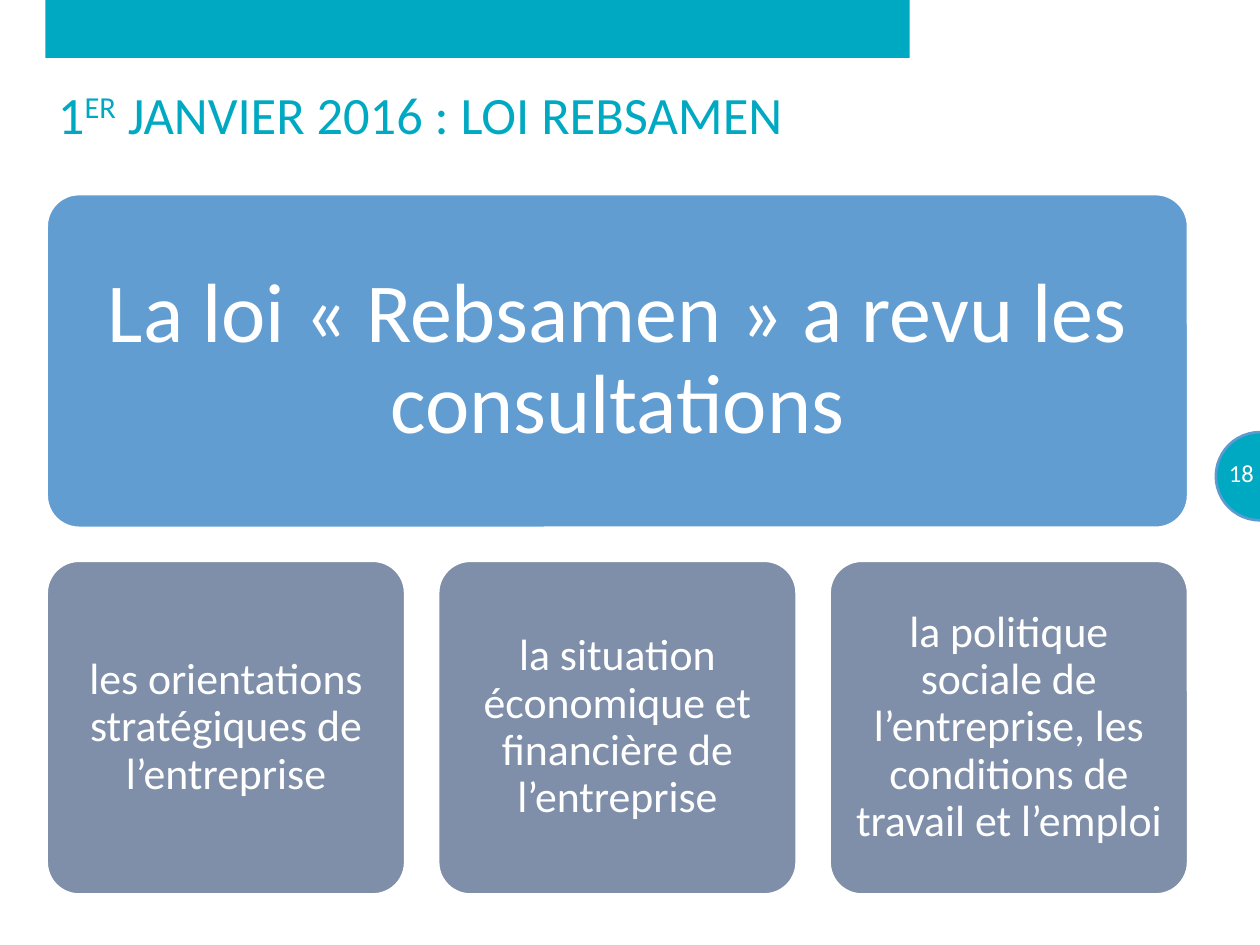
import pptx
import pptx.util
import pptx.dml.color
import pptx.enum.shapes
import pptx.enum.text

Inches = pptx.util.Inches
SHAPES = pptx.enum.shapes.MSO_SHAPE
ALIGN = pptx.enum.text.PP_ALIGN
ANCHOR = pptx.enum.text.MSO_ANCHOR

TITLE = [("1", 0), ("ER", 30), (" JANVIER 2016 : LOI REBSAMEN", 0)]
PAGE_NUMBER = "18"
HEADLINE = "La loi « Rebsamen » a revu les consultations"
TOPICS = [
    "les orientations stratégiques de l’entreprise",
    "la situation économique et financière de l’entreprise",
    "la politique sociale de l’entreprise, les conditions de travail et l’emploi",
]

THEME = {
    "font": "Calibri",
    "accent": "00A9C2",
    "badge_line": "5D9ACF",
    "headline": "629DD1",
    "topic": "7F8FA9",
    "white": "FFFFFF",
    "title_size": 30,
    "number_size": 14,
    "headline_size": 48,
    "topic_size": 25,
}

LEFT, WIDTH, GAP = 0.36, 9.08, 0.24
CARD_TOP, CARD_HEIGHT = 1.53, 2.67


def color(name):
    return pptx.dml.color.RGBColor.from_string(THEME[name])


def apply(target, values):
    for name, value in values.items():
        setattr(target, name, value)


def add_span(para, text, size, tint):
    span = para.add_run()
    span.text = text
    apply(span.font, {"name": THEME["font"], "size": pptx.util.Pt(THEME[size])})
    span.font.color.rgb = color(tint)
    return span


def set_frame(frame, anchor, inset=None):
    apply(frame, {"word_wrap": True, "vertical_anchor": anchor,
                  "auto_size": pptx.enum.text.MSO_AUTO_SIZE.NONE})
    if inset is not None:
        sides = ("left", "top", "right", "bottom")
        apply(frame, {f"margin_{side}": Inches(inset) for side in sides})


def add_shape(page, kind, place, fill, line=None, line_width=0):
    shape = page.shapes.add_shape(kind, *map(Inches, place))
    shape.shadow.inherit = False
    shape.fill.solid()
    shape.fill.fore_color.rgb = color(fill)
    if line:
        shape.line.color.rgb = color(line)
        shape.line.width = pptx.util.Pt(line_width)
    else:
        shape.line.fill.background()
    return shape


def add_card(page, text, place, style, inset):
    card = add_shape(page, SHAPES.ROUNDED_RECTANGLE, place, style, "white", 3)
    card.adjustments[0] = 0.1
    set_frame(card.text_frame, ANCHOR.MIDDLE, inset)
    para = card.text_frame.paragraphs[0]
    apply(para, {"alignment": ALIGN.CENTER, "line_spacing": 0.9})
    add_span(para, text, f"{style}_size", "white")


def add_title(page):
    title = page.shapes.title
    apply(title, dict(zip(("left", "top", "width", "height"),
                          map(Inches, (LEFT, 0.6, 9.29, 0.77)))))
    set_frame(title.text_frame, ANCHOR.TOP)
    para = title.text_frame.paragraphs[0]
    para.alignment = ALIGN.LEFT
    for text, raised in TITLE:
        span = add_span(para, text, "title_size", "accent")
        if raised:
            span._r.get_or_add_rPr().set("baseline", str(raised * 1000))


def add_page_number(page):
    add_shape(page, SHAPES.OVAL, (9.65, 3.43, 0.7, 0.7), "accent", "badge_line", 1.5)
    box = page.shapes.add_textbox(*map(Inches, (9.62, 3.55, 0.43, 0.4)))
    set_frame(box.text_frame, ANCHOR.MIDDLE)
    para = box.text_frame.paragraphs[0]
    para.alignment = ALIGN.RIGHT
    add_span(para, PAGE_NUMBER, "number_size", "white")


def main():
    deck = pptx.Presentation()
    apply(deck, {"slide_width": Inches(10), "slide_height": Inches(7.5)})
    page = deck.slides.add_slide(deck.slide_layouts[5])

    add_shape(page, SHAPES.RECTANGLE, (LEFT, 0, 6.86, 0.46), "accent")
    add_page_number(page)
    add_title(page)

    add_card(page, HEADLINE, (LEFT, CARD_TOP, WIDTH, CARD_HEIGHT), "headline", 0.2)
    topic_width = (WIDTH - GAP * (len(TOPICS) - 1)) / len(TOPICS)
    topic_top = CARD_TOP + CARD_HEIGHT + GAP
    for index, topic in enumerate(TOPICS):
        left = LEFT + index * (topic_width + GAP)
        add_card(page, topic, (left, topic_top, topic_width, CARD_HEIGHT), "topic", 0.1)

    deck.save("out.pptx")


if __name__ == "__main__":
    main()
